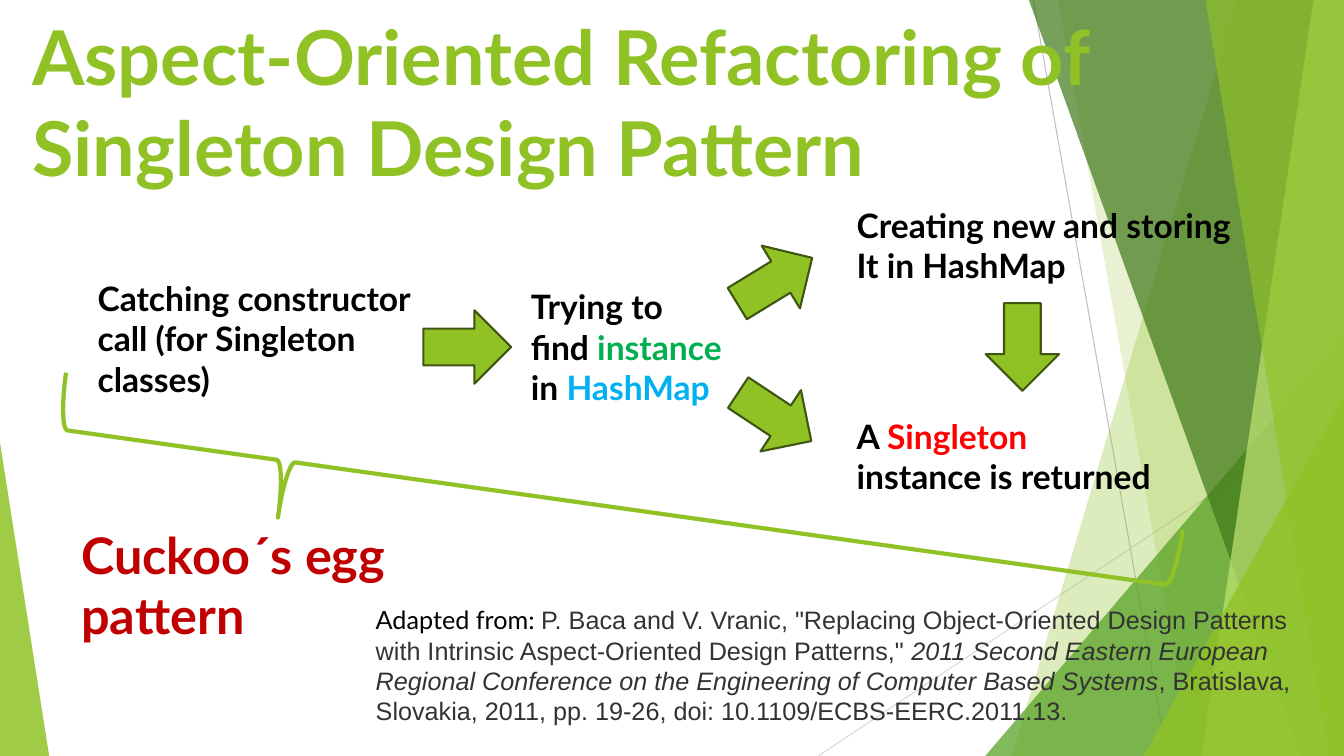
from lxml.etree import SubElement
from pptx import Presentation
from pptx.dml.color import RGBColor
from pptx.enum.shapes import MSO_CONNECTOR as Link, MSO_SHAPE as Form
from pptx.enum.text import MSO_ANCHOR as Anchor, MSO_AUTO_SIZE as Fit, PP_ALIGN as Align
from pptx.oxml.ns import qn
from pptx.util import Cm, Pt

LIME = RGBColor(0x90, 0xC2, 0x26)
LEAF = RGBColor(0x54, 0xA0, 0x21)
MOSS = RGBColor(0x3F, 0x78, 0x19)
PALE = RGBColor(0xC0, 0xE4, 0x74)
EDGE = RGBColor(0x3F, 0x55, 0x11)
SILVER = RGBColor(0xBF, 0xBF, 0xBF)
MIST = RGBColor(0xD9, 0xD9, 0xD9)
BLACK = RGBColor(0, 0, 0)
GREY = RGBColor(0x33, 0x33, 0x33)
GREEN = RGBColor(0, 0xB0, 0x50)
BLUE = RGBColor(0, 0xB0, 0xF0)
RED = RGBColor(0xFF, 0, 0)
WINE = RGBColor(0xC0, 0, 0)

WIDE, HIGH = 33.87, 19.05


def write(para, text, size=24, font="Lato", color=BLACK, bold=True, italic=False):
    run = para.add_run()
    run.text = text
    run.font.size = Pt(size)
    run.font.name = font
    run.font.color.rgb = color
    run.font.bold = bold
    run.font.italic = italic


def label(slide, box, lines, **style):
    frame = slide.shapes.add_textbox(*map(Cm, box)).text_frame
    frame.word_wrap = True
    for i, line in enumerate(lines):
        para = frame.add_paragraph() if i else frame.paragraphs[0]
        for text, extra in line:
            write(para, text, **{**style, **extra})


def paint(shape, color, alpha):
    shape.shadow.inherit = False
    shape.fill.solid()
    shape.fill.fore_color.rgb = color
    shape.line.fill.background()
    tint = shape.element.xpath("./p:spPr/a:solidFill/a:srgbClr")[0]
    SubElement(tint, qn("a:alpha")).set("val", str(alpha * 1000))


def ray(slide, start, end, color):
    line = slide.shapes.add_connector(Link.STRAIGHT, *map(Cm, start + end))
    line.line.color.rgb = color
    line.line.width = Pt(0.75)
    SubElement(line.element.spPr, qn("a:effectLst"))


def blade(slide, right, base, upper, lower, color, alpha):
    pen = slide.shapes.build_freeform(Cm(upper), 0)
    pen.add_line_segments([(Cm(right), 0), (Cm(right), Cm(base)), (Cm(lower), Cm(base))])
    paint(pen.convert_to_shape(), color, alpha)


def wedge(slide, box, tip, color, alpha):
    shape = slide.shapes.add_shape(Form.ISOSCELES_TRIANGLE, *map(Cm, box))
    shape.adjustments[0] = tip
    paint(shape, color, alpha)


def backdrop(slide, left, top, width, height):
    right, base = left + width, top + height
    ray(slide, (left + 26.04, top), (left + 29.41, base), SILVER)
    ray(slide, (right, top + 10.24), (left + 20.62, base), MIST)

    def blades(*rows):
        for upper, lower, color, alpha in rows:
            blade(slide, right, base, left + upper, left + lower, color, alpha)

    def corner(wide, high, color, alpha):
        wedge(slide, (right - wide, base - high, wide, high), 1, color, alpha)

    blades((31.19, 25.5, LIME, 30), (26.67, 30.05, LIME, 20))
    corner(9.04, 10.59, LEAF, 72)
    blades((25.93, 32.79, MOSS, 70), (33.1, 30.28, PALE, 70), (30.38, 33.48, LIME, 65))
    corner(5.05, 9.07, LIME, 80)
    wedge(slide, (left, base - 7.9, 1.24, 7.9), 0, LIME, 85)


def heading(slide, left, top, width, height):
    title = slide.shapes.title
    title.left, title.top, title.width, title.height = map(Cm, (left, top, width, height))
    title.element.getparent().append(title.element)
    frame = title.text_frame
    frame.word_wrap = True
    frame.auto_size = Fit.NONE
    frame.vertical_anchor = Anchor.TOP
    para = frame.paragraphs[0]
    para.alignment = Align.LEFT
    write(para, "Aspect-Oriented Refactoring of Singleton Design Pattern", size=54, color=LIME)


def flow(slide, left, top):
    steps = [
        (0, 1.85, 8.99, 3.33, [
            [("Catching constructor", {})],
            [("call (for Singleton", {})],
            [("classes)", {})]]),
        (10.92, 2.06, 5.94, 3.33, [
            [("Trying to", {})],
            [("find ", {}), ("instance", {"color": GREEN})],
            [("in ", {}), ("HashMap", {"color": BLUE})]]),
        (19.13, 0, 10.74, 2.31, [
            [("Creating new and storing", {})],
            [("It in HashMap", {})]]),
        (19.13, 5.33, 8.81, 2.31, [
            [("A ", {}), ("Singleton", {"color": RED})],
            [("instance is returned", {})]]),
    ]
    for x, y, wide, high, lines in steps:
        label(slide, (left + x, top + y, wide, high), lines)
    turns = [(8.46, 2.79, 0), (16.21, 1.12, 328.6), (16.21, 4.55, 33.5), (22.45, 2.79, 90)]
    for x, y, turn in turns:
        arrow = slide.shapes.add_shape(
            Form.RIGHT_ARROW, Cm(left + x), Cm(top + y), Cm(2.21), Cm(1.85))
        arrow.rotation = turn
        arrow.shadow.inherit = False
        arrow.fill.solid()
        arrow.fill.fore_color.rgb = LIME
        arrow.line.color.rgb = EDGE
        arrow.line.width = Pt(1.5)


def summary(slide, left, top):
    brace = slide.shapes.add_shape(
        Form.RIGHT_BRACE, Cm(left + 12.3), Cm(top - 14.5), Cm(2.87), Cm(28.42))
    brace.adjustments[0] = 0.083
    brace.adjustments[1] = 0.796
    brace.rotation = 98
    brace.shadow.inherit = False
    brace.fill.background()
    brace.line.color.rgb = LIME
    brace.line.width = Pt(3)
    lines = [[("Cuckoo´s egg", {})], [("pattern", {})]]
    label(slide, (left, top, 8.97, 3.33), lines, size=36, color=WINE)


def credit(slide, *box):
    plain = {"font": "Arial", "color": GREY}
    label(slide, box, [[
        ("Adapted from: ", {}),
        ('P. Baca and V. Vranic, "Replacing Object-Oriented Design Patterns '
         'with Intrinsic Aspect-Oriented Design Patterns," ', plain),
        ("2011 Second Eastern European Regional Conference on the Engineering "
         "of Computer Based Systems", {**plain, "italic": True}),
        (", Bratislava, Slovakia, 2011, pp. 19-26, doi: 10.1109/ECBS-EERC.2011.13.", plain),
    ]], size=18, bold=False)


def main():
    deck = Presentation()
    deck.slide_width, deck.slide_height = Cm(WIDE), Cm(HIGH)
    slide = deck.slides.add_slide(deck.slide_layouts[5])
    backdrop(slide, 0, 0, WIDE, HIGH)
    heading(slide, 0.56, 0.13, 31.17, 3.66)
    flow(slide, 2.21, 5.03)
    summary(slide, 1.8, 13.08)
    credit(slide, 9.22, 15.11, 23.7, 3.33)
    deck.save("out.pptx")


if __name__ == "__main__":
    main()
